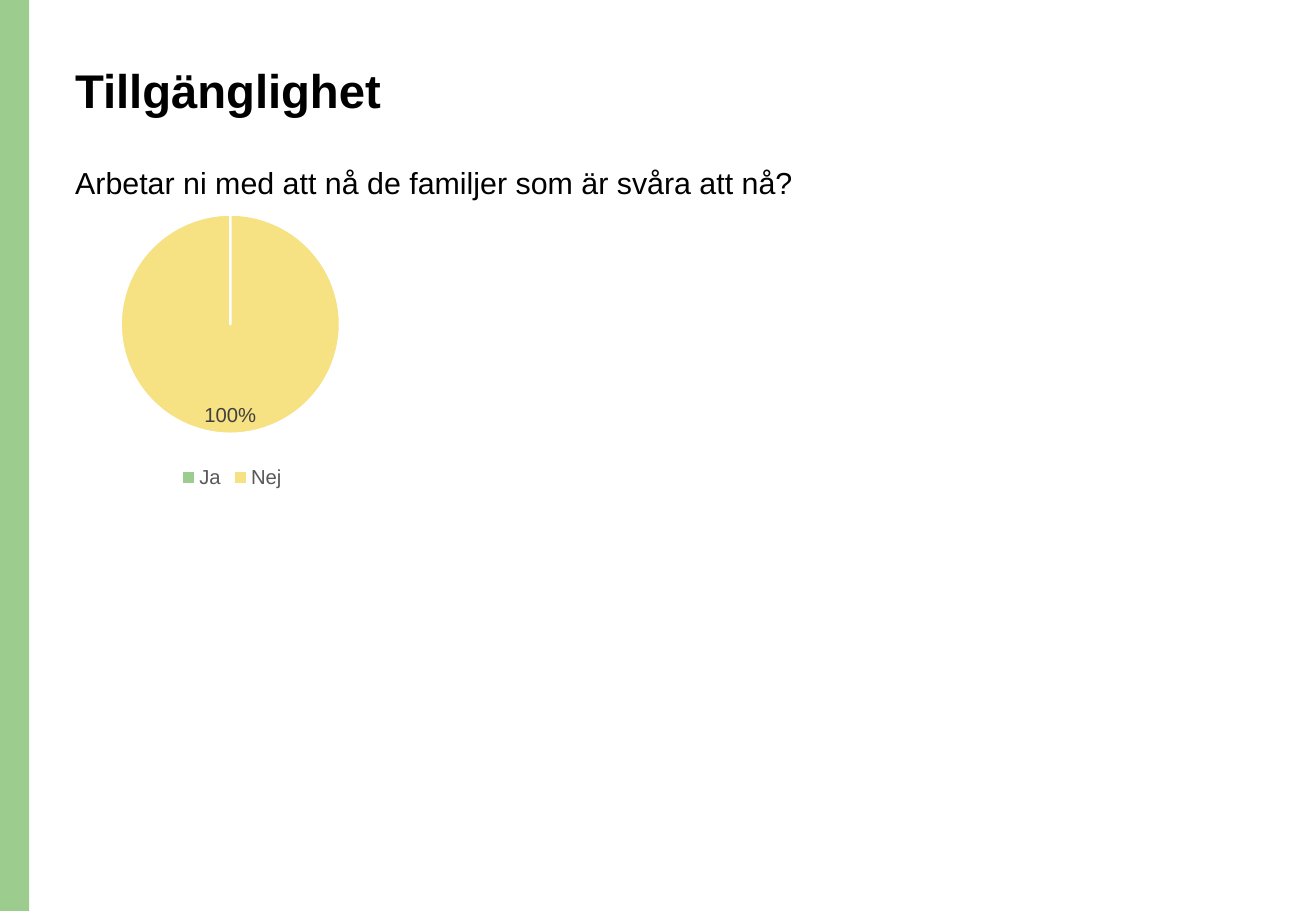
from dataclasses import dataclass

from pptx import Presentation
from pptx.chart.data import CategoryChartData
from pptx.dml.color import RGBColor as Rgb
from pptx.enum import chart as ch, shapes, text
from pptx.oxml import parse_xml
from pptx.oxml.ns import nsdecls
from pptx.util import Inches, Pt


@dataclass(frozen=True)
class Theme:
    font: str = "Arial"
    green: str = "9DCC8F"
    yellow: str = "F6E183"
    white: str = "FFFFFF"
    black: str = "000000"
    dark: str = "404040"
    grey: str = "595959"
    title: int = 28
    body: int = 18
    label: int = 12
    base: int = 10


THEME = Theme()


def style(font, size, color, bold=False):
    font.name = THEME.font
    font.size = Pt(size)
    font.bold = bold
    font.color.rgb = Rgb.from_string(color)


def add_band(slide, box):
    band = slide.shapes.add_shape(shapes.MSO_SHAPE.RECTANGLE, *map(Inches, box))
    band.shadow.inherit = False
    band.fill.solid()
    band.fill.fore_color.rgb = Rgb.from_string(THEME.green)
    band.line.fill.background()


def add_text(slide, box, words, size, bold=False, top=0.05):
    frame = slide.shapes.add_textbox(*map(Inches, box)).text_frame
    frame.word_wrap = True
    frame.vertical_anchor = text.MSO_ANCHOR.TOP
    frame.margin_top = Inches(top)
    para = frame.paragraphs[0]
    para.line_spacing = 0.9
    run = para.add_run()
    run.text = words
    style(run.font, size, THEME.black, bold)


def add_pie(slide, box):
    data = CategoryChartData(number_format="0%")
    data.categories = ["Ja", "Nej"]
    data.add_series("Series 1", [0, 1])
    chart = slide.shapes.add_chart(
        ch.XL_CHART_TYPE.PIE, *map(Inches, box), data
    ).chart
    style(chart.font, THEME.base, THEME.black)
    chart.has_title = False
    chart.has_legend = True
    legend = chart.legend
    legend.position = ch.XL_LEGEND_POSITION.BOTTOM
    legend.include_in_layout = False
    style(legend.font, THEME.label, THEME.grey)

    plot = chart.plots[0]
    plot.vary_by_categories = True
    series = plot.series[0]
    for index, color in enumerate((THEME.green, THEME.yellow)):
        form = series.points[index].format
        form.fill.solid()
        form.fill.fore_color.rgb = Rgb.from_string(color)
        form.line.color.rgb = Rgb.from_string(THEME.white)
        form.line.width = Pt(1.5)

    labels = series.data_labels
    labels.show_value = True
    labels.show_percentage = False
    labels.number_format = "0%"
    labels.number_format_is_linked = False
    labels.position = ch.XL_LABEL_POSITION.INSIDE_END
    style(labels.font, THEME.label, THEME.dark)
    hidden = f'<c:dLbl {nsdecls("c")}><c:idx val="0"/><c:delete val="1"/></c:dLbl>'
    labels._element.insert(0, parse_xml(hidden))

    area = chart._chartSpace.chart.plotArea
    for old in area.findall("{*}layout"):
        area.remove(old)
    sizes = {"x": 0.17, "y": 0.06, "w": 0.65, "h": 0.74}
    parts = '<c:layoutTarget val="inner"/><c:xMode val="edge"/><c:yMode val="edge"/>'
    parts += "".join(f'<c:{key} val="{val}"/>' for key, val in sizes.items())
    layout = f'<c:layout {nsdecls("c")}><c:manualLayout>{parts}</c:manualLayout></c:layout>'
    area.insert(0, parse_xml(layout))


def add_page(deck, box):
    slide = deck.slides.add_slide(deck.slide_layouts[6])
    left, top, width, height = box
    inner = left + 0.52
    add_band(slide, (left, top, 0.24, height))
    add_text(slide, (inner, top + 0.48, width - 1.49, 1.02),
             "Tillgänglighet", THEME.title, True, 0.08)
    add_text(slide, (inner, top + 1.34, 7.01, 0.57),
             "Arbetar ni med att nå de familjer som är svåra att nå?", THEME.body)
    add_pie(slide, (inner, top + 1.62, 2.78, 2.44))


def main():
    deck = Presentation()
    width, height = 10.83, 7.5
    deck.slide_width = Inches(width)
    deck.slide_height = Inches(height)
    add_page(deck, (0, 0, width, height))
    deck.save("out.pptx")


if __name__ == "__main__":
    main()
